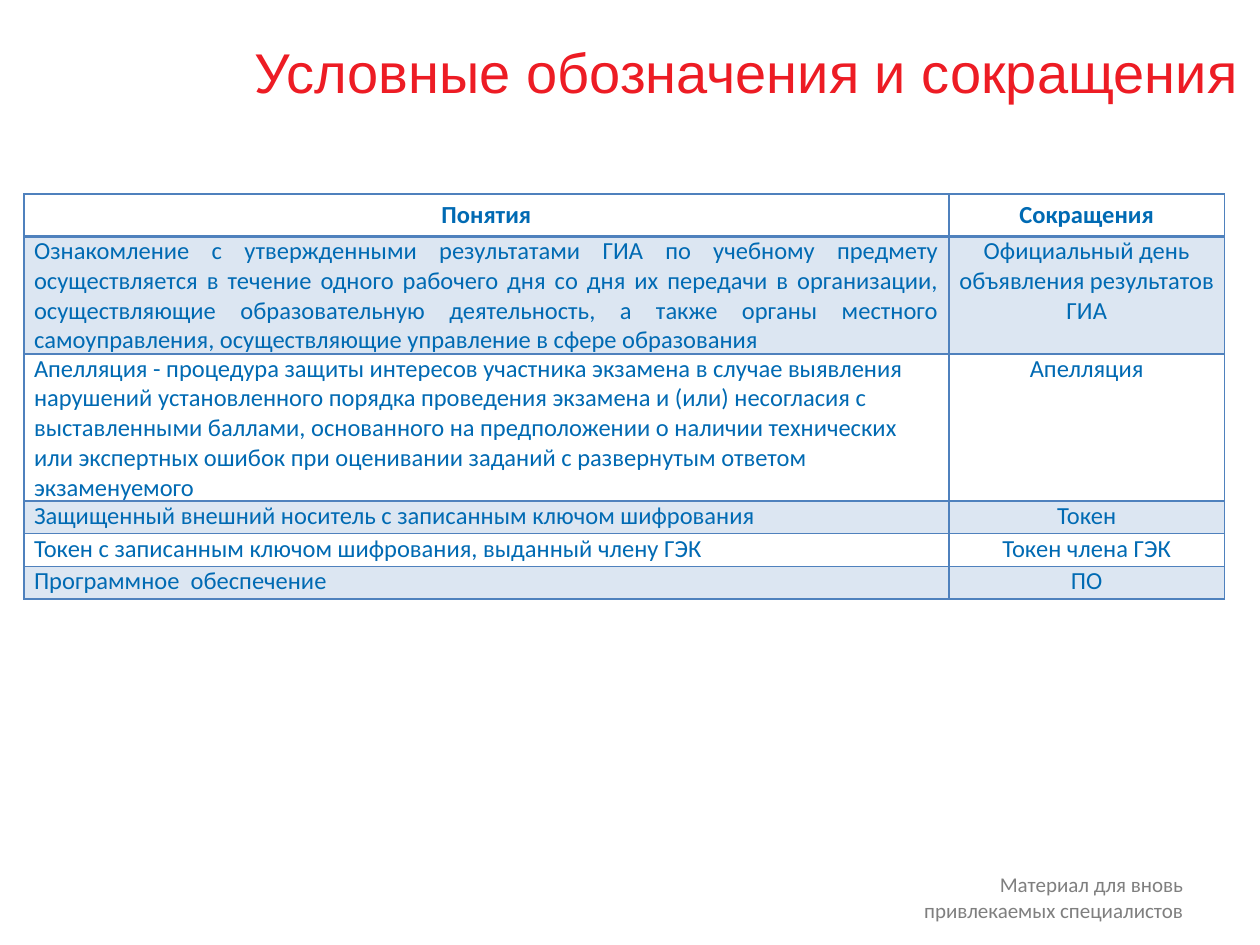
from dataclasses import dataclass

from lxml.etree import SubElement
from pptx import Presentation
from pptx.dml.color import RGBColor
from pptx.enum.text import MSO_ANCHOR as Anchor, PP_ALIGN as Align
from pptx.oxml.ns import qn
from pptx.util import Inches, Pt


@dataclass(frozen=True)
class Theme:
    title_font: str = "Arial"
    body_font: str = "Calibri"
    title_color: str = "ED1C24"
    text_color: str = "006AB3"
    note_color: str = "7F7F7F"
    border_color: str = "4F81BD"
    band_color: str = "DCE6F2"
    title_size: int = 32
    table_size: int = 14
    note_size: int = 12


THEME = Theme()
COLUMN_WIDTHS = (7.34, 2.19)
ROW_HEIGHTS = (0.3, 0.85, 1.06, 0.26, 0.26, 0.26)
HEADINGS = ("Понятия", "Сокращения")
TERMS = (
    ("Ознакомление с утвержденными результатами ГИА по учебному предмету "
     "осуществляется в течение одного рабочего дня со дня их передачи в организации, "
     "осуществляющие образовательную деятельность, а также органы местного "
     "самоуправления, осуществляющие управление в сфере образования",
     "Официальный день объявления результатов ГИА"),
    ("Апелляция - процедура защиты интересов участника экзамена в случае выявления "
     "нарушений установленного порядка проведения экзамена и (или) несогласия с "
     "выставленными баллами, основанного на предположении о наличии технических "
     "или экспертных ошибок при оценивании заданий с развернутым ответом экзаменуемого",
     "Апелляция"),
    ("Защищенный внешний носитель с записанным ключом шифрования", "Токен"),
    ("Токен с записанным ключом шифрования, выданный члену ГЭК", "Токен члена ГЭК"),
    ("Программное  обеспечение", "ПО"),
)


def style_paragraph(paragraph, font_name, size, color, align, bold=False):
    paragraph.alignment = align
    font = paragraph.font
    font.name, font.size, font.bold = font_name, Pt(size), bold
    font.color.rgb = RGBColor.from_string(color)


def add_text(slide, text, box, font_name, size, color, align, anchor=Anchor.TOP):
    frame = slide.shapes.add_textbox(*map(Inches, box)).text_frame
    frame.word_wrap = True
    frame.vertical_anchor = anchor
    frame.text = text
    style_paragraph(frame.paragraphs[0], font_name, size, color, align)


def set_borders(cell, **widths):
    """Draw the sides L, R, T and B; they must precede the fill in the XML."""
    properties = cell._tc.get_or_add_tcPr()
    for side in "LRTB":
        line = SubElement(properties, qn(f"a:ln{side}"), w=str(Pt(widths.get(side, 1))))
        fill = SubElement(line, qn("a:solidFill"))
        SubElement(fill, qn("a:srgbClr"), val=THEME.border_color)


def fill_cell(cell, text, align, header=False, banded=False):
    cell.text = text
    cell.margin_left = cell.margin_right = Inches(0.1 if header else 0.08)
    cell.margin_top = cell.margin_bottom = Inches(0.05 if header else 0)
    cell.vertical_anchor = Anchor.MIDDLE if header else Anchor.TOP
    paragraph = cell.text_frame.paragraphs[0]
    style_paragraph(paragraph, THEME.body_font, THEME.table_size,
                    THEME.text_color, align, header)
    if header:
        paragraph.space_after = Pt(1)
    if banded:
        cell.fill.solid()
        cell.fill.fore_color.rgb = RGBColor.from_string(THEME.band_color)
    else:
        cell.fill.background()


def add_terms_table(slide):
    rows = (HEADINGS, *TERMS)
    table = slide.shapes.add_table(
        len(rows), len(HEADINGS), Inches(0.19), Inches(1.54),
        Inches(sum(COLUMN_WIDTHS)), Inches(sum(ROW_HEIGHTS))).table
    table.first_row = table.horz_banding = False
    for column, width in zip(table.columns, COLUMN_WIDTHS):
        column.width = Inches(width)
    for row, height in zip(table.rows, ROW_HEIGHTS):
        row.height = Inches(height)
    for r, texts in enumerate(rows):
        for c, text in enumerate(texts):
            align = Align.CENTER if r == 0 or c == 1 else Align.LEFT
            if (r, c) == (1, 0):
                align = Align.JUSTIFY
            cell = table.cell(r, c)
            set_borders(cell, T=2 if r == 1 else 1, B=2 if r == 0 else 1)
            fill_cell(cell, text, align, header=r == 0, banded=r % 2 == 1)


def main():
    deck = Presentation()
    deck.slide_width, deck.slide_height = Inches(10), Inches(7.5)
    slide = deck.slides.add_slide(deck.slide_layouts[6])
    add_text(slide, "Материал для вновь привлекаемых специалистов",
             (6.97, 6.87, 2.52, 0.51), THEME.body_font, THEME.note_size,
             THEME.note_color, Align.RIGHT)
    add_text(slide, "Условные обозначения и сокращения",
             (1.89, -0.02, 8.07, 1.17), THEME.title_font, THEME.title_size,
             THEME.title_color, Align.CENTER, Anchor.MIDDLE)
    add_terms_table(slide)
    deck.save("out.pptx")


if __name__ == "__main__":
    main()
